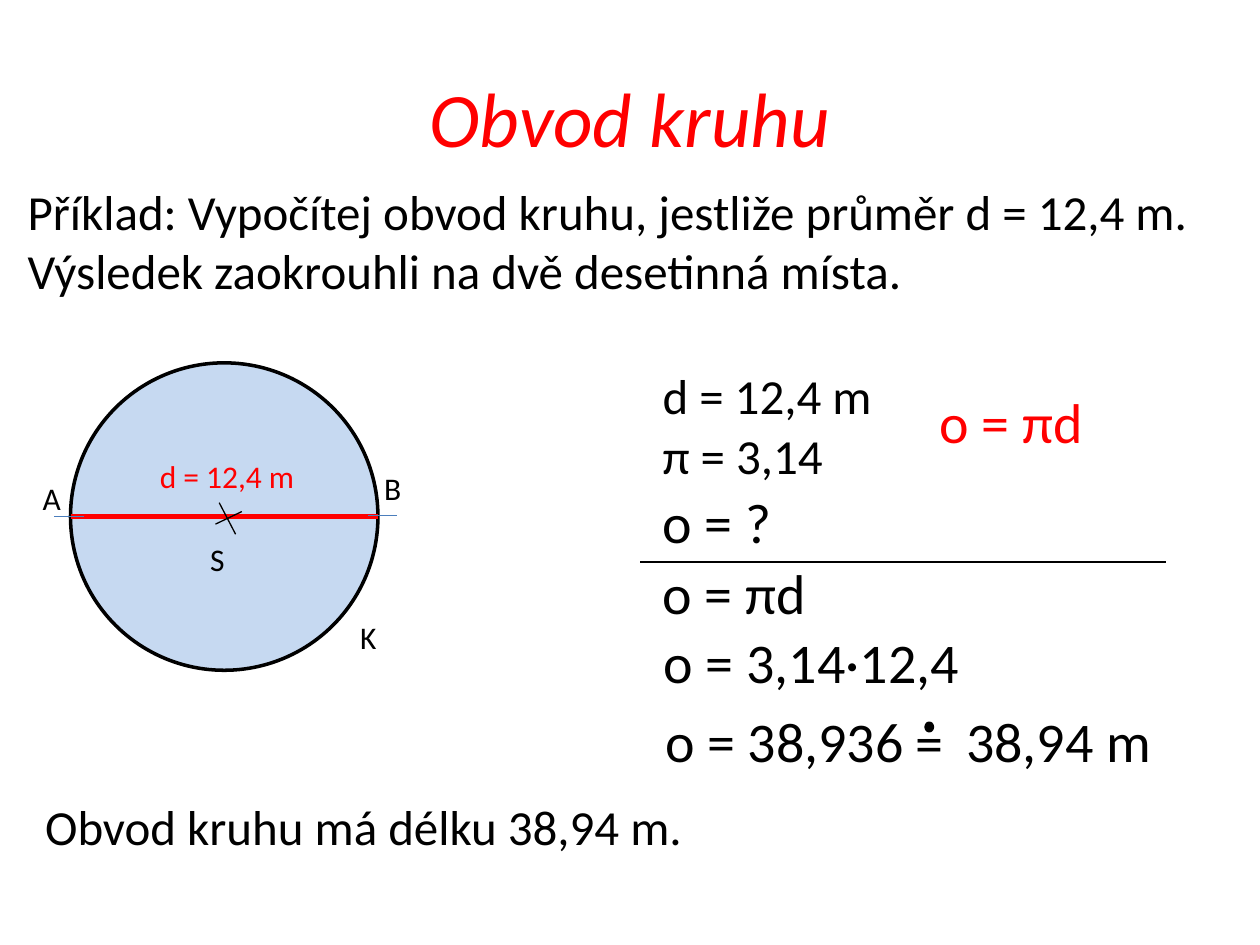
from lxml import etree
from pptx import Presentation
from pptx import util as u
from pptx.dml.color import RGBColor
from pptx.enum import shapes, text
from pptx.oxml.ns import qn

COLORS = {"ink": "000000", "accent": "FF0000", "disc": "C6D9F1", "tick": "4B7EBC"}

deck = Presentation()
deck.slide_width, deck.slide_height = u.Inches(10), u.Inches(7.5)
page = deck.slides.add_slide(deck.slide_layouts[6])
CELL = deck.slide_width // 100  # square grid: 100 columns by 75 rows


def write(parent, words, column, row, columns, rows, size, color="ink"):
    box = parent.shapes.add_textbox(*(round(n * CELL) for n in (column, row, columns, rows)))
    box.text_frame.word_wrap = True
    para = box.text_frame.paragraphs[0]
    span = para.add_run()
    span.text = words
    span.font.name, span.font.size = "Calibri", u.Pt(size)
    span.font.color.rgb = RGBColor.from_string(COLORS[color])
    return box, para, span


def rule(parent, start, end, width=0.75, color="ink"):
    """Draw a straight line between two (column, row) points."""
    line = parent.shapes.add_connector(
        shapes.MSO_CONNECTOR.STRAIGHT, *(round(n * CELL) for n in start + end))
    line.line.width = u.Pt(width)
    line.line.color.rgb = RGBColor.from_string(COLORS[color])
    etree.SubElement(line._element.spPr, qn("a:effectLst"))


# Title and task
box, para, span = write(page, "Obvod kruhu", 5, 3, 90, 12.5, 44, "accent")
box.text_frame.vertical_anchor = text.MSO_ANCHOR.MIDDLE
para.alignment = text.PP_ALIGN.CENTER
span.font.italic = True
write(page, "Příklad: Vypočítej obvod kruhu, jestliže průměr d = 12,4 m. "
      "Výsledek zaokrouhli na dvě desetinná místa.", 1.2, 13.9, 96.1, 10.4, 28)

# Worked solution
for words, column, row, columns, size, color in (
    ("d = 12,4 m", 51.6, 28.5, 18.8, 28, "ink"),
    ("π = 3,14", 51.6, 33.3, 14.9, 28, "ink"),
    ("o = ?", 51.6, 38.2, 10.7, 32, "ink"),
    ("o = πd", 51.6, 43.8, 13.5, 32, "ink"),
    ("o = πd", 73.6, 30.3, 13.5, 32, "accent"),
    ("o = 3,14·12,4", 51.7, 49.3, 25.7, 32, "ink"),
    ("Obvod kruhu má délku 38,94 m.", 2.6, 62.7, 56.1, 28, "ink"),
):
    write(page, words, column, row, columns, size / 5, size, color)
rule(page, (50.8, 44.6), (92.5, 44.6))

# The rounded result follows a tab stop that leaves room for the sign
box, para, span = write(page, "o = 38,936\t38,94 m", 51.8, 55.6, 41.1, 6.4, 32)
stops = etree.SubElement(para._p.get_or_add_pPr(), qn("a:tabLst"))
etree.SubElement(stops, qn("a:tab"), pos=str(round(23.9 * CELL)), algn="l")

# Circle with its diameter
disc = page.shapes.add_shape(
    shapes.MSO_SHAPE.OVAL, *(round(n * CELL) for n in (5.6, 28.8, 24.4, 24.4)))
rule(page, (5.6, 41), (30, 41), 3, "accent")
rule(page, (4.3, 41), (6.7, 41), color="tick")
rule(page, (29.2, 40.9), (31.5, 40.9), color="tick")
center_mark = page.shapes.add_group_shape()
rule(center_mark, (17.4, 39.9), (18.7, 42.4))
rule(center_mark, (17.1, 41.6), (19.2, 40.6))
write(page, "d = 12,4 m", 11.7, 35.8, 14.4, 4, 18, "accent")
for letter, column, row in (("A", 2.4, 37.5), ("B", 29.5, 36.7),
                            ("S", 15.7, 42.4), ("K", 27.6, 48.6)):
    write(page, letter, column, row, 3.1, 4, 18)

# Rounded-equals sign: a dot above an equals sign
rounded_sign = page.shapes.add_group_shape()
dot = rounded_sign.shapes.add_shape(
    shapes.MSO_SHAPE.OVAL, *(round(n * CELL) for n in (73.5, 57.4, 0.5, 0.6)))
write(rounded_sign, "=", 71.7, 55.7, 6.3, 6.4, 32)

for oval, fill in ((disc, "disc"), (dot, "ink")):
    oval.shadow.inherit = False
    oval.fill.solid()
    oval.fill.fore_color.rgb = RGBColor.from_string(COLORS[fill])
    oval.line.color.rgb = RGBColor.from_string(COLORS["ink"])
    oval.line.width = u.Pt(2)

deck.save("out.pptx")
